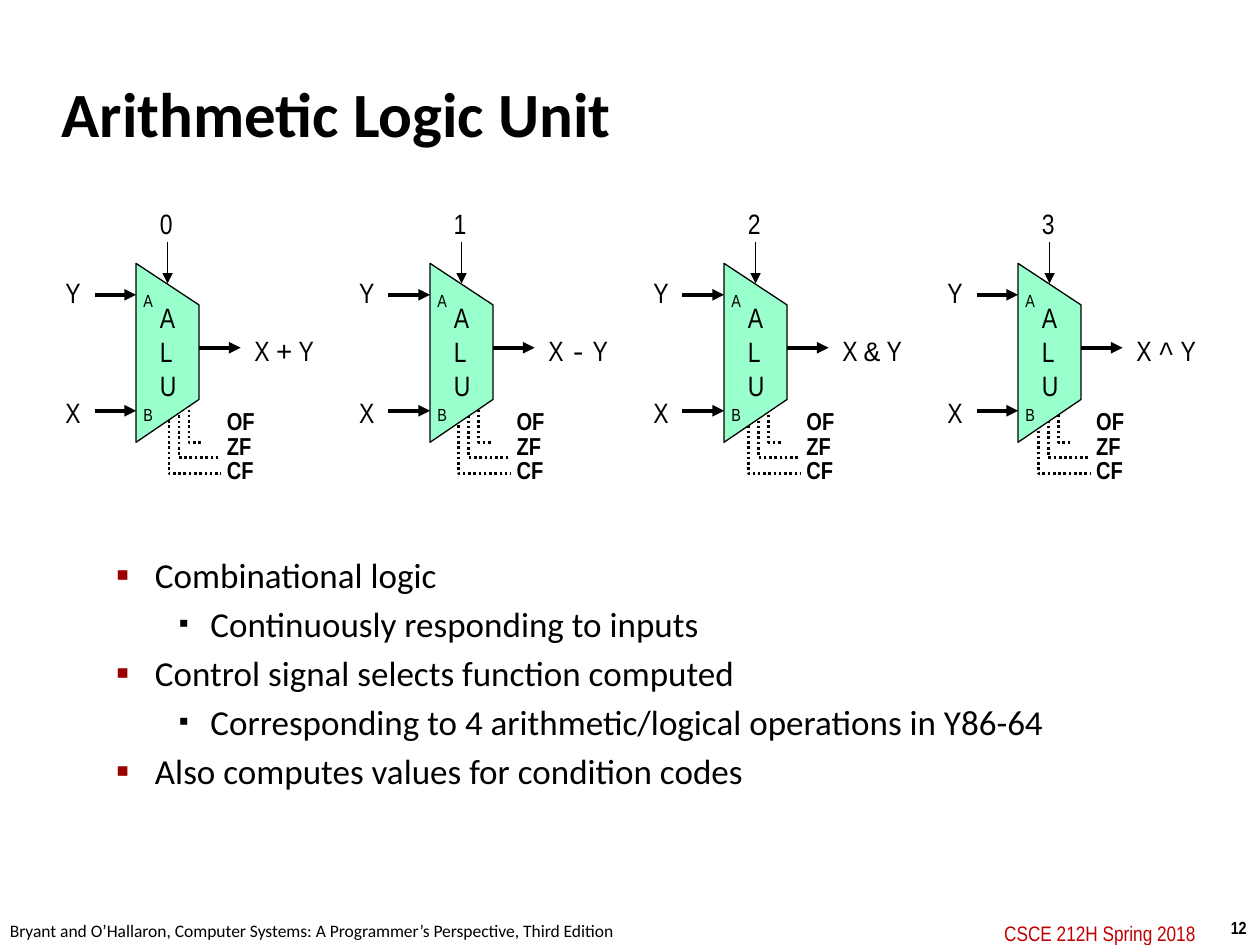
from dataclasses import dataclass

from lxml.etree import SubElement
from pptx import Presentation
from pptx.dml.color import RGBColor
from pptx.enum.dml import MSO_LINE_DASH_STYLE as Dash
from pptx.enum.text import MSO_ANCHOR as Anchor, MSO_AUTO_SIZE as AutoSize, PP_ALIGN as Align
from pptx.enum.shapes import MSO_CONNECTOR as Connector
from pptx.oxml.ns import qn
from pptx.util import Inches, Pt

COLORS = {"ink": "000000", "alu": "99FFCC", "bullet": "990000", "course": "C00000"}
NARROW, BODY, MONO = "Arial Narrow", "Calibri", "Courier New"
ALU_LEFT, ALU_STEP = 1.08, 7 / 3
FLAG_LEFT, FLAG_STEP = 1.34, 2.3
TIGHT = 0.05


@dataclass
class Alu:
    control: str
    operator: str


@dataclass
class Flag:
    name: str
    top: float
    wire: list[tuple[float, float]]


@dataclass
class Bullet:
    level: int
    text: str


@dataclass
class BulletStyle:
    margin: float
    hanging: float
    percent: int
    color: str


ALUS = [Alu("0", "+"), Alu("1", "-"), Alu("2", "&"), Alu("3", "^")]
FLAGS = [
    Flag("OF", 3.17, [(0.16, 3), (0.16, 3.51), (0.26, 3.51)]),
    Flag("ZF", 3.37, [(0.08, 3.13), (0.08, 3.63), (0.41, 3.63)]),
    Flag("CF", 3.56, [(0, 3.25), (0, 3.76), (0.41, 3.76)]),
]
BULLETS = [
    Bullet(1, "Combinational logic"),
    Bullet(2, "Continuously responding to inputs"),
    Bullet(1, "Control signal selects function computed"),
    Bullet(2, "Corresponding to 4 arithmetic/logical operations in Y86-64"),
    Bullet(1, "Also computes values for condition codes"),
]
BULLET_STYLES = {
    1: BulletStyle(0.81, 0.31, 110, "bullet"),
    2: BulletStyle(1.25, 0.25, 80, "ink"),
}


def rgb(name: str) -> RGBColor:
    return RGBColor.from_string(COLORS[name])


def set_font(target, size: float, name: str = NARROW, color: str = "ink", bold: bool = False) -> None:
    values = {"size": Pt(size), "name": name, "bold": bold}
    for attribute, value in values.items():
        setattr(target.font, attribute, value)
    target.font.color.rgb = rgb(color)


def set_place(shape, left: float, top: float, width: float, height: float) -> None:
    places = {"left": left, "top": top, "width": width, "height": height}
    for attribute, value in places.items():
        setattr(shape, attribute, Inches(value))


def add_label(shapes, at: tuple, spans: list, size: float, inset: float | None = None,
              wrap: bool = False, anchor=Anchor.TOP, **style):
    """Add one paragraph per list of (text, font) spans."""
    box = shapes.add_textbox(*map(Inches, at))
    frame = box.text_frame
    frame.word_wrap, frame.auto_size = wrap, AutoSize.SHAPE_TO_FIT_TEXT
    frame.vertical_anchor = anchor
    if inset is not None:
        for side in ("left", "top", "right", "bottom"):
            setattr(frame, f"margin_{side}", Inches(inset))
    for index, line in enumerate(spans):
        para = frame.add_paragraph() if index else frame.paragraphs[0]
        for text, font in line:
            span = para.add_run()
            span.text = text
            set_font(span, size, font, **style)


def add_text(shapes, at: tuple, text: str, size: float, font: str = NARROW, **options) -> None:
    add_label(shapes, at, [[(text, font)]], size, **options)


def add_arrow(shapes, start: tuple, end: tuple, width: float) -> None:
    arrow = shapes.add_connector(Connector.STRAIGHT, *map(Inches, (*start, *end)))
    arrow.line.width = Pt(width)
    arrow.line.color.rgb = rgb("ink")
    SubElement(arrow.line._get_or_add_ln(), qn("a:tailEnd"), type="triangle")
    SubElement(arrow._element.spPr, qn("a:effectLst"))


def add_outline(shapes, points: list, width: float, closed: bool = False):
    corners = [(Inches(x), Inches(y)) for x, y in points]
    builder = shapes.build_freeform(*corners[0])
    builder.add_line_segments(corners[1:], close=closed)
    outline = builder.convert_to_shape()
    outline.shadow.inherit = False
    outline.fill.background()
    outline.line.width = Pt(width)
    outline.line.color.rgb = rgb("ink")
    return outline


def add_flags(page, left: float) -> None:
    shapes = page.shapes.add_group_shape().shapes
    for flag in FLAGS:
        wire = add_outline(shapes, [(left + x, y) for x, y in flag.wire], 1.5)
        wire.line.dash_style = Dash.ROUND_DOT
    for flag in FLAGS:
        add_text(shapes, (left + 0.41, flag.top, 0.33, 0.34), flag.name, 14, inset=TIGHT, bold=True)


def add_alu(page, alu: Alu, left: float) -> None:
    shapes = page.shapes.add_group_shape().shapes
    right, middle = left + 0.5, left + 0.25
    add_arrow(shapes, (middle, 1.92), (middle, 2.25), 0.75)
    body = add_outline(shapes, [(left, 2.09), (right, 2.42), (right, 3.17), (left, 3.51)], 0.75, True)
    body.fill.solid()
    body.fill.fore_color.rgb = rgb("alu")
    add_label(shapes, (left + 0.09, 2.34, 0.42, 0.9), [[(letter, NARROW)] for letter in "ALU"], 16, wrap=True)
    for name, port, wire_y, name_top, port_top in (
        ("Y", "A", 2.34, 2.14, 2.25),
        ("X", "B", 3.26, 3.09, 3.16),
    ):
        add_arrow(shapes, (left - 0.33, wire_y), (left, wire_y), 2.25)
        add_text(shapes, (left - 0.66, name_top, 0.33, 0.37), name, 16)
        add_text(shapes, (left - 0.04, port_top, 0.28, 0.27), port, 10)
    add_arrow(shapes, (right, 2.76), (right + 0.33, 2.76), 2.25)
    result = [("X ", NARROW), (alu.operator, MONO), (" Y", NARROW)]
    add_label(shapes, (right + 0.34, 2.6, 0.68, 0.37), [result], 16)
    add_text(shapes, (left + 0.09, 1.59, 0.3, 0.37), alu.control, 16)


def fill_title(title, text: str) -> None:
    set_place(title, 0.39, 0.48, 8.3, 0.83)
    frame = title.text_frame
    frame.text = text
    frame.auto_size, frame.vertical_anchor = AutoSize.NONE, Anchor.MIDDLE
    para = frame.paragraphs[0]
    para.alignment = Align.LEFT
    set_font(para.runs[0], 36, BODY, bold=True)


def fill_bullets(body) -> None:
    set_place(body, 0.32, 4.34, 9.08, 2.71)
    frame = body.text_frame
    frame.auto_size = AutoSize.NONE
    for index, bullet in enumerate(BULLETS):
        para = frame.add_paragraph() if index else frame.paragraphs[0]
        style = BULLET_STYLES[bullet.level]
        para.level = bullet.level
        para.space_before = Pt(4 if index else 0)
        props = para._p.get_or_add_pPr()
        props.set("marL", str(Inches(style.margin)))
        props.set("indent", str(-Inches(style.hanging)))
        tint = SubElement(props, qn("a:buClr"))
        SubElement(tint, qn("a:srgbClr"), val=COLORS[style.color])
        SubElement(props, qn("a:buSzPct"), val=str(style.percent * 1000))
        SubElement(props, qn("a:buChar"), char="▪")
        span = para.add_run()
        span.text = bullet.text
        set_font(span, 20, BODY)


def main() -> None:
    deck = Presentation()
    deck.slide_width, deck.slide_height = Inches(10), Inches(7.5)
    page = deck.slides.add_slide(deck.slide_layouts[1])
    fill_title(page.shapes.title, "Arithmetic Logic Unit")
    fill_bullets(page.placeholders[1])
    add_text(page.shapes, (9.67, 7.23, 0.34, 0.27), "12", 10, bold=True)
    add_text(page.shapes, (-0.02, 7.25, 5.08, 0.27),
             "Bryant and O’Hallaron, Computer Systems: A Programmer’s Perspective, Third Edition", 10, BODY)
    add_text(page.shapes, (7.92, 7.26, 1.64, 0.3), "CSCE 212H Spring 2018", 12,
             inset=TIGHT, anchor=Anchor.MIDDLE, color="course")
    for index in range(len(ALUS)):
        add_flags(page, FLAG_LEFT + index * FLAG_STEP)
    for index, alu in enumerate(ALUS):
        add_alu(page, alu, ALU_LEFT + index * ALU_STEP)
    deck.save("out.pptx")


if __name__ == "__main__":
    main()
